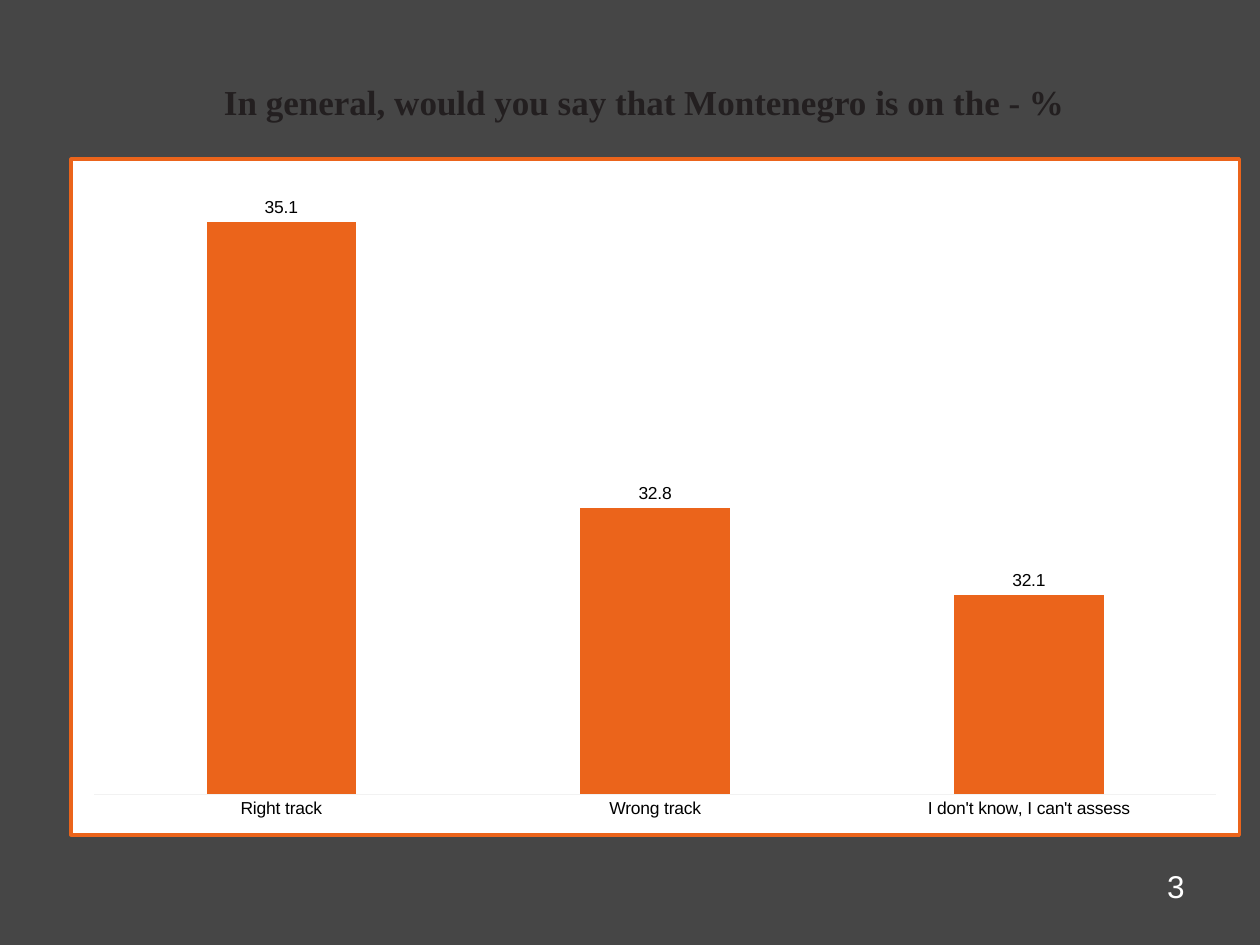
from dataclasses import dataclass

from lxml import etree
from pptx import Presentation
from pptx.chart.data import CategoryChartData
from pptx.dml.color import RGBColor
from pptx.enum import chart as ch, text as tx
from pptx.oxml import parse_xml
from pptx.oxml.ns import nsdecls, qn
from pptx.util import Inches, Pt


@dataclass(frozen=True)
class Theme:
    background: str = "464646"
    title: str = "231F20"
    accent: str = "EB641B"
    panel: str = "FFFFFF"
    axis: str = "F2F2F2"
    labels: str = "000000"
    number: str = "FFFFFF"
    title_font: str = "Times New Roman"
    body_font: str = "Arial"
    title_size: int = 20
    chart_size: int = 10
    number_size: int = 18
    border: int = 2


THEME = Theme()


def style(font, name, size, color, bold=False):
    font.name, font.size, font.bold = name, Pt(size), bold
    font.color.rgb = RGBColor.from_string(color)


def add_title(s, box, text):
    title = s.shapes.title
    title.left, title.top, title.width, title.height = box
    tf = title.text_frame
    tf.text = text
    tf.word_wrap = True
    tf.auto_size = tx.MSO_AUTO_SIZE.NONE
    tf.vertical_anchor = tx.MSO_ANCHOR.BOTTOM
    p = tf.paragraphs[0]
    p.alignment = tx.PP_ALIGN.CENTER
    style(p.runs[0].font, THEME.title_font, THEME.title_size, THEME.title, True)


def frame_chart(chart):
    """Give the chart area its white panel and accent border."""
    panel = parse_xml(
        f'<c:spPr {nsdecls("c", "a")}>'
        f'<a:solidFill><a:srgbClr val="{THEME.panel}"/></a:solidFill>'
        f'<a:ln w="{Pt(THEME.border)}"><a:solidFill>'
        f'<a:srgbClr val="{THEME.accent}"/></a:solidFill></a:ln></c:spPr>')
    chart.element.find(qn("c:chart")).addnext(panel)


def place_plot(chart, **fractions):
    """Set the inner plot area as fractions of the chart area."""
    area = chart.element.find(qn("c:chart")).find(qn("c:plotArea"))
    for old in area.findall(qn("c:layout")):
        area.remove(old)
    layout = etree.Element(qn("c:layout"))
    manual = etree.SubElement(layout, qn("c:manualLayout"))
    settings = {"layoutTarget": "inner", "xMode": "edge", "yMode": "edge", **fractions}
    for tag, value in settings.items():
        etree.SubElement(manual, qn(f"c:{tag}")).set("val", str(value))
    area.insert(0, layout)


def add_track_chart(s, box, shares):
    data = CategoryChartData(number_format="###0.0")
    data.categories = list(shares)
    data.add_series("Series 1", list(shares.values()))
    chart = s.shapes.add_chart(ch.XL_CHART_TYPE.COLUMN_CLUSTERED, *box, data).chart
    style(chart.font, THEME.body_font, THEME.chart_size, THEME.labels)
    chart.has_legend = chart.has_title = False
    frame_chart(chart)
    place_plot(chart, x=0.02, y=0.02, w=0.96, h=0.92)

    plot = chart.plots[0]
    plot.vary_by_categories = False
    plot.gap_width, plot.overlap = 150, -25
    fill = plot.series[0].format.fill
    fill.solid()
    fill.fore_color.rgb = RGBColor.from_string(THEME.accent)
    plot.has_data_labels = True
    labels = plot.data_labels
    labels.show_value = True
    labels.number_format, labels.number_format_is_linked = "###0.0", False
    labels.position = ch.XL_LABEL_POSITION.OUTSIDE_END

    values = chart.value_axis
    values.minimum_scale, values.maximum_scale = 30.5, 35.5
    values.has_major_gridlines = False
    values.visible = False
    categories = chart.category_axis
    categories.major_tick_mark = categories.minor_tick_mark = ch.XL_TICK_MARK.NONE
    categories.format.line.color.rgb = RGBColor.from_string(THEME.axis)


def add_page_number(s, box, number):
    tf = s.shapes.add_textbox(*box).text_frame
    tf.word_wrap = True
    tf.text = str(number)
    p = tf.paragraphs[0]
    p.alignment = tx.PP_ALIGN.RIGHT
    style(p.runs[0].font, THEME.body_font, THEME.number_size, THEME.number)


def inches(*lengths):
    return [Inches(n) for n in lengths]


def main():
    prs = Presentation()
    prs.slide_width, prs.slide_height = inches(10, 7.5)
    s = prs.slides.add_slide(prs.slide_layouts.get_by_name("Title Only"))
    s.background.fill.solid()
    s.background.fill.fore_color.rgb = RGBColor.from_string(THEME.background)

    add_title(s, inches(1.09, 0.08, 8.05, 0.94),
              "In general, would you say that Montenegro is on the - %")
    add_track_chart(s, inches(0.55, 1.25, 9.3, 5.39), {
        "Right track": 35.1,
        "Wrong track": 32.8,
        "I don't know, I can't assess": 32.1,
    })
    add_page_number(s, inches(7.17, 6.83, 2.33, 0.52), 3)
    prs.save("out.pptx")


if __name__ == "__main__":
    main()
